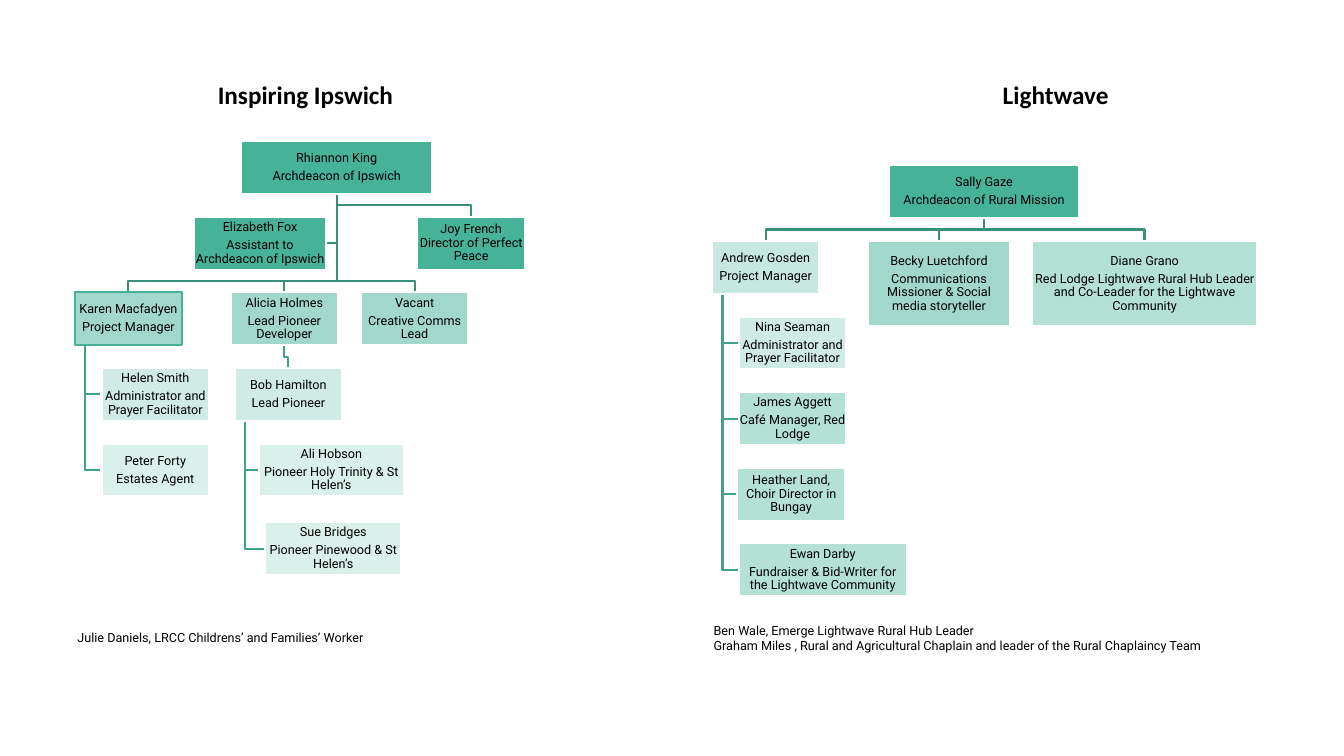
from dataclasses import dataclass

from pptx import Presentation
from pptx.dml.color import RGBColor
from pptx.enum.text import MSO_ANCHOR, MSO_AUTO_SIZE, PP_ALIGN
from pptx.enum.shapes import MSO_SHAPE
from pptx.oxml.ns import qn
from pptx.util import Inches, Pt
from lxml.etree import SubElement

WIDTH, HEIGHT = Inches(13.33), Inches(7.5)
COL, ROW = WIDTH / 100, HEIGHT / 10
CARD_W, CARD_H = 8, 0.7
ELBOW = 0.15  # rows between a crossbar and the cards below it

GREEN, MID, PALE = "46B298", "B4E1D6", "D9F0EB"
UPPER_LINE, LOWER_LINE = "388F7A", "40A28A"


@dataclass
class Card:
    """A post; col and row count from the chart's corner."""
    lines: str
    col: float
    row: float
    boss: str = ""
    link: str = "down"
    fill: str = GREEN
    alpha: int = 100
    w: float = CARD_W
    h: float = CARD_H
    border: str = "FFFFFF"
    wire: str = UPPER_LINE

    @property
    def name(self):
        return self.lines.split("\n")[0]

    @property
    def center(self):
        return self.col + self.w / 2

    @property
    def middle(self):
        return self.row + self.h / 2

    @property
    def bottom(self):
        return self.row + self.h


IPSWICH = [
    Card("Rhiannon King\nArchdeacon of Ipswich", 12.4, 0, w=14.2),
    Card("Elizabeth Fox\nAssistant to Archdeacon of Ipswich", 8.9, 1, "Rhiannon King", "assistant", w=9.8),
    Card("Joy French Director of Perfect Peace", 25.5, 1, "Rhiannon King"),
    Card("Karen Macfadyen\nProject Manager", 0, 2, "Rhiannon King", alpha=50, border=GREEN),
    Card("Alicia Holmes\nLead Pioneer Developer", 11.6, 2, "Rhiannon King", alpha=50),
    Card("Vacant\nCreative Comms Lead", 21.3, 2, "Rhiannon King", alpha=50),
    Card("Helen Smith\nAdministrator and Prayer Facilitator", 2, 3, "Karen Macfadyen", "side",
         alpha=25, wire=LOWER_LINE),
    Card("Peter Forty\nEstates Agent", 2, 4, "Karen Macfadyen", "side", PALE, wire=LOWER_LINE),
    Card("Bob Hamilton\nLead Pioneer", 11.9, 3, "Alicia Holmes", alpha=25, wire=LOWER_LINE),
    Card("Ali Hobson\nPioneer Holy Trinity & St Helen’s", 13.7, 4, "Bob Hamilton", "side", PALE,
         w=10.8, wire=LOWER_LINE),
    Card("Sue Bridges\nPioneer Pinewood & St Helen’s", 14.2, 5.04, "Bob Hamilton", "side", PALE,
         w=10.1, wire=LOWER_LINE),
]

LIGHTWAVE = [
    Card("Sally Gaze\nArchdeacon of Rural Mission", 13.2, 0, w=14.1),
    Card("Andrew Gosden\nProject Manager", 0, 1, "Sally Gaze", fill="8ED3C2", alpha=50),
    Card("Becky Luetchford\nCommunications Missioner & Social media storyteller", 11.6, 1, "Sally Gaze",
         alpha=50, w=10.6, h=1.13),
    Card("Diane Grano\nRed Lodge Lightwave Rural Hub Leader and Co-Leader for the Lightwave Community",
         23.8, 1, "Sally Gaze", fill=MID, w=16.8, h=1.13),
    Card("Nina Seaman\nAdministrator and Prayer Facilitator", 2, 2, "Andrew Gosden", "side",
         alpha=25, wire=LOWER_LINE),
    Card("James Aggett\nCafé Manager, Red Lodge", 2, 3, "Andrew Gosden", "side", MID, wire=LOWER_LINE),
    Card("Heather Land, Choir Director in Bungay", 1.9, 4, "Andrew Gosden", "side", MID, wire=LOWER_LINE),
    Card("Ewan Darby\nFundraiser & Bid-Writer for the Lightwave Community", 2, 5, "Andrew Gosden",
         "side", MID, w=12.5, wire=LOWER_LINE),
]


def rgb(hex_colour):
    return RGBColor.from_string(hex_colour)


def style_text(tf, size, font, bold=False, align=PP_ALIGN.LEFT):
    tf.word_wrap = True
    tf.auto_size = MSO_AUTO_SIZE.NONE
    for p in tf.paragraphs:
        p.alignment = align
        p.space_before = Pt(0)
        for r in p.runs:
            r.font.size, r.font.name, r.font.bold = Pt(size), font, bold
            r.font.color.rgb = rgb("000000")


def link_points(boss, card):
    """Corners of the line from boss to card, in columns and rows."""
    if card.link == "side":
        trunk = boss.col + boss.w / 10
        return [(trunk, boss.bottom), (trunk, card.middle), (card.col, card.middle)]
    start = (boss.center, boss.bottom)
    if card.link == "assistant":
        return [start, (boss.center, card.middle), (card.col + card.w, card.middle)]
    bar = card.row - ELBOW
    return [start, (boss.center, bar), (card.center, bar), (card.center, card.row)]


def add_link(s, points, colour):
    builder = s.shapes.build_freeform(*points[0])
    builder.add_line_segments(points[1:], close=False)
    sp = builder.convert_to_shape()
    sp.shadow.inherit = False
    sp.fill.background()
    sp.line.color.rgb = rgb(colour)
    sp.line.width = Pt(1.5)


def add_card(s, card, left, top):
    sp = s.shapes.add_shape(MSO_SHAPE.RECTANGLE, left, top, int(card.w * COL), int(card.h * ROW))
    sp.shadow.inherit = False
    sp.fill.solid()
    sp.fill.fore_color.rgb = rgb(card.fill)
    if card.alpha < 100:
        colour = sp.fill._xPr.find(qn("a:solidFill"))[0]
        SubElement(colour, qn("a:alpha")).set("val", str(card.alpha * 1000))
    sp.line.color.rgb = rgb(card.border)
    sp.line.width = Pt(1.5)
    tf = sp.text_frame
    tf.text = card.lines
    tf.vertical_anchor = MSO_ANCHOR.MIDDLE
    tf.margin_left = tf.margin_right = tf.margin_top = tf.margin_bottom = Inches(0.01)
    style_text(tf, 9, "Roboto", align=PP_ALIGN.CENTER)
    for p in tf.paragraphs:
        p.line_spacing = 0.9
        p.space_after = Pt(3.15)


def add_org_chart(s, cards, left, top):
    def place(col, row):
        return int(left + col * COL), int(top + row * ROW)

    by_name = {card.name: card for card in cards}
    for card in cards:
        if card.boss:
            points = link_points(by_name[card.boss], card)
            add_link(s, [place(*point) for point in points], card.wire)
    for card in cards:
        add_card(s, card, *place(card.col, card.row))


def set_heading(sp, text, center):
    width = Inches(5.6)
    sp.left, sp.top, sp.width, sp.height = int(center - width / 2), Inches(0.73), width, Inches(0.41)
    tf = sp.text_frame
    tf.text = text
    tf.vertical_anchor = MSO_ANCHOR.MIDDLE
    style_text(tf, 18, "Calibri", bold=True, align=PP_ALIGN.CENTER)


def add_note(s, text, left, top, width, height):
    tf = s.shapes.add_textbox(left, top, width, height).text_frame
    tf.text = text
    style_text(tf, 9, "Roboto")


def main():
    prs = Presentation()
    prs.slide_width, prs.slide_height = WIDTH, HEIGHT
    s = prs.slides.add_slide(prs.slide_layouts.get_by_name("Comparison"))
    holders = {sp.placeholder_format.idx: sp for sp in s.placeholders}
    set_heading(holders.pop(0), "Inspiring Ipswich", Inches(3.03))
    set_heading(holders.pop(1), "Lightwave", Inches(10.47))
    for sp in holders.values():
        sp.element.getparent().remove(sp.element)
    add_org_chart(s, IPSWICH, Inches(0.74), Inches(1.4))
    add_org_chart(s, LIGHTWAVE, Inches(7.06), Inches(1.64))
    add_note(s, "Julie Daniels, LRCC Childrens’ and Families’ Worker",
             Inches(0.67), Inches(6.2), Inches(5.04), Inches(0.56))
    add_note(s, "Ben Wale, Emerge Lightwave Rural Hub Leader\n"
             "Graham Miles , Rural and Agricultural Chaplain and leader of the Rural Chaplaincy Team",
             Inches(6.98), Inches(6.13), Inches(5.46), Inches(0.71))
    prs.save("out.pptx")


if __name__ == "__main__":
    main()
